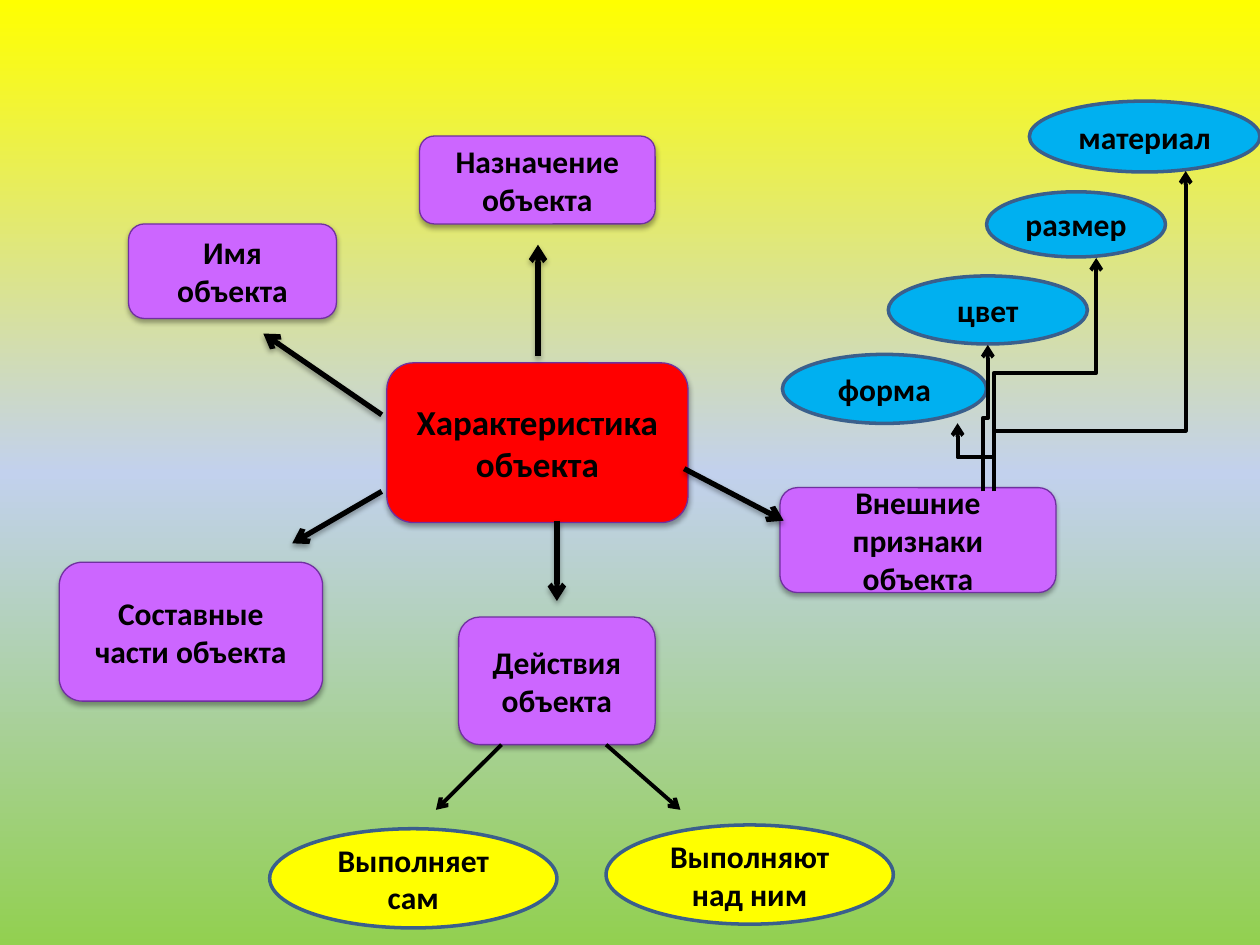
from pptx import Presentation
from pptx.dml.color import RGBColor as RGB
from pptx.enum.shapes import MSO_CONNECTOR as CONN, MSO_SHAPE as SHAPE
from pptx.enum.text import MSO_ANCHOR as ANCHOR, PP_ALIGN as ALIGN
from pptx.oxml import parse_xml
from pptx.oxml.ns import nsdecls, qn
from pptx.util import Inches, Pt

C = {"red": "FF0000", "violet": "CC66FF", "purple": "7030A0", "sky": "00B0F0",
     "yellow": "FFFF00", "steel": "3A5F8C", "black": "000000",
     "mist": "C2D1ED", "green": "92D050"}

prs = Presentation()
prs.slide_width, prs.slide_height = Inches(10), Inches(7.5)
s = prs.slides.add_slide(prs.slide_layouts[6])

# All places are percentages of the slide's width and height
PX, PY = prs.slide_width / 100, prs.slide_height / 100


def set_effects(shape, shadow):
    """Give the shape a soft shadow below it, or none."""
    pr = shape._element.spPr
    effects = parse_xml(f"<a:effectLst {nsdecls('a')}/>")
    if shadow:
        effects.append(parse_xml(
            f'<a:outerShdw {nsdecls("a")} blurRad="{Pt(3.1)}" dist="{Pt(1.8)}" '
            f'dir="5400000" rotWithShape="0"><a:srgbClr val="{C["black"]}">'
            '<a:alpha val="35000"/></a:srgbClr></a:outerShdw>'))
    pr.append(effects)


def add_arrow(kind, x1, y1, x2, y2, width, shadow=False):
    """Add a black connector (EMU ends) with an open arrowhead."""
    c = s.shapes.add_connector(kind, *(round(v) for v in (x1, y1, x2, y2)))
    c.line.color.rgb = RGB.from_string(C["black"])
    c.line.width = Pt(width)
    c.line._get_or_add_ln().append(
        parse_xml(f'<a:tailEnd {nsdecls("a")} type="arrow"/>'))
    set_effects(c, shadow)
    return c


# Background: three-stop gradient from top to bottom
fill = s.background.fill
fill.gradient()
fill.gradient_angle = 270
stops = s._element.find(".//" + qn("a:gsLst"))
for stop in list(stops):
    stops.remove(stop)
for pos, name in ((0, "yellow"), (50, "mist"), (100, "green")):
    stops.append(parse_xml(f'<a:gs {nsdecls("a")} pos="{pos * 1000}">'
                           f'<a:srgbClr val="{C[name]}"/></a:gs>'))

# Boxes and ovals: shape, fill, line, line width, shadow, text size
STYLES = {
    "topic": (SHAPE.ROUNDED_RECTANGLE, "red", "purple", 0.75, True, 20),
    "aspect": (SHAPE.ROUNDED_RECTANGLE, "violet", "purple", 0.75, True, 18),
    "feature": (SHAPE.OVAL, "sky", "steel", 2, False, 18),
    "action": (SHAPE.OVAL, "yellow", "steel", 2, False, 18),
}
NODES = [
    ("topic", "Характеристика объекта", 30.7, 38.4, 23.9, 16.9),
    ("aspect", "Имя объекта", 10.2, 23.7, 16.5, 10),
    ("aspect", "Действия объекта", 36.4, 65.3, 15.6, 13.5),
    ("aspect", "Составные части объекта", 4.7, 59.5, 20.9, 14.7),
    ("aspect", "Внешние признаки объекта", 61.9, 51.6, 21.9, 11.1),
    ("aspect", "Назначение объекта", 33.3, 14.4, 18.7, 9.3),
    ("feature", "форма", 62.1, 37.5, 16.2, 7.3),
    ("feature", "цвет", 70.5, 29.2, 15.8, 7.2),
    ("feature", "размер", 78.3, 20.3, 14.2, 6.9),
    ("feature", "материал", 81.7, 10.7, 18.3, 7.5),
    ("action", "Выполняет сам", 21.4, 87.7, 22.8, 10.5),
    ("action", "Выполняют над ним", 48.1, 87.3, 22.8, 10.5),
]
for style, text, x, y, w, h in NODES:
    kind, color, edge, width, shadow, size = STYLES[style]
    sp = s.shapes.add_shape(kind, round(x * PX), round(y * PY),
                            round(w * PX), round(h * PY))
    sp.fill.solid()
    sp.fill.fore_color.rgb = RGB.from_string(C[color])
    sp.line.color.rgb = RGB.from_string(C[edge])
    sp.line.width = Pt(width)
    set_effects(sp, shadow)
    tf = sp.text_frame
    tf.word_wrap = True
    tf.vertical_anchor = ANCHOR.MIDDLE
    p = tf.paragraphs[0]
    p.alignment = ALIGN.CENTER
    r = p.add_run()
    r.text = text
    r.font.name, r.font.size, r.font.bold = "Calibri", Pt(size), True
    r.font.color.rgb = RGB.from_string(C["black"])

# Straight arrows: from the topic to its aspects, then to the two actions
TOPIC_ARROWS = [(44.2, 55.1, 44.2, 63.6), (54.3, 49.6, 62.2, 55.1),
                (42.7, 37.7, 42.7, 25.9), (30.3, 43.9, 20.9, 35.3),
                (30.3, 52, 23.2, 57.5)]
ACTION_ARROWS = [(39.8, 78.8, 34.6, 85.7), (48.1, 78.8, 54, 85.7)]
for arrows, width, shadow in ((TOPIC_ARROWS, 3, True),
                              (ACTION_ARROWS, 2.25, False)):
    for x1, y1, x2, y2 in arrows:
        add_arrow(CONN.STRAIGHT, x1 * PX, y1 * PY, x2 * PX, y2 * PY,
                  width, shadow)

# Elbow arrows rise to the features: a quarter turn makes them start upwards
# (start, end, share of the rise at which they bend)
for x1, y1, x2, y2, bend in ((78.9, 52, 76, 44.8, 0.5),
                             (78, 52, 78.4, 36.5, 0.5),
                             (78.9, 51.6, 87, 27.3, 0.5),
                             (78.9, 51.6, 94.1, 18.1, 0.18)):
    cx, cy = (x1 + x2) / 2 * PX, (y1 + y2) / 2 * PY
    rise, run = (y1 - y2) * PY / 2, (x2 - x1) * PX / 2
    c = add_arrow(CONN.ELBOW, cx - rise, cy - run, cx + rise, cy + run, 2.25)
    c._element.spPr.find(qn("a:xfrm")).set("rot", str(270 * 60000))
    guides = c._element.spPr.find(qn("a:prstGeom")).get_or_add_avLst()
    guides.append(parse_xml(f'<a:gd {nsdecls("a")} name="adj1" '
                            f'fmla="val {round(bend * 100000)}"/>'))

prs.save("out.pptx")
